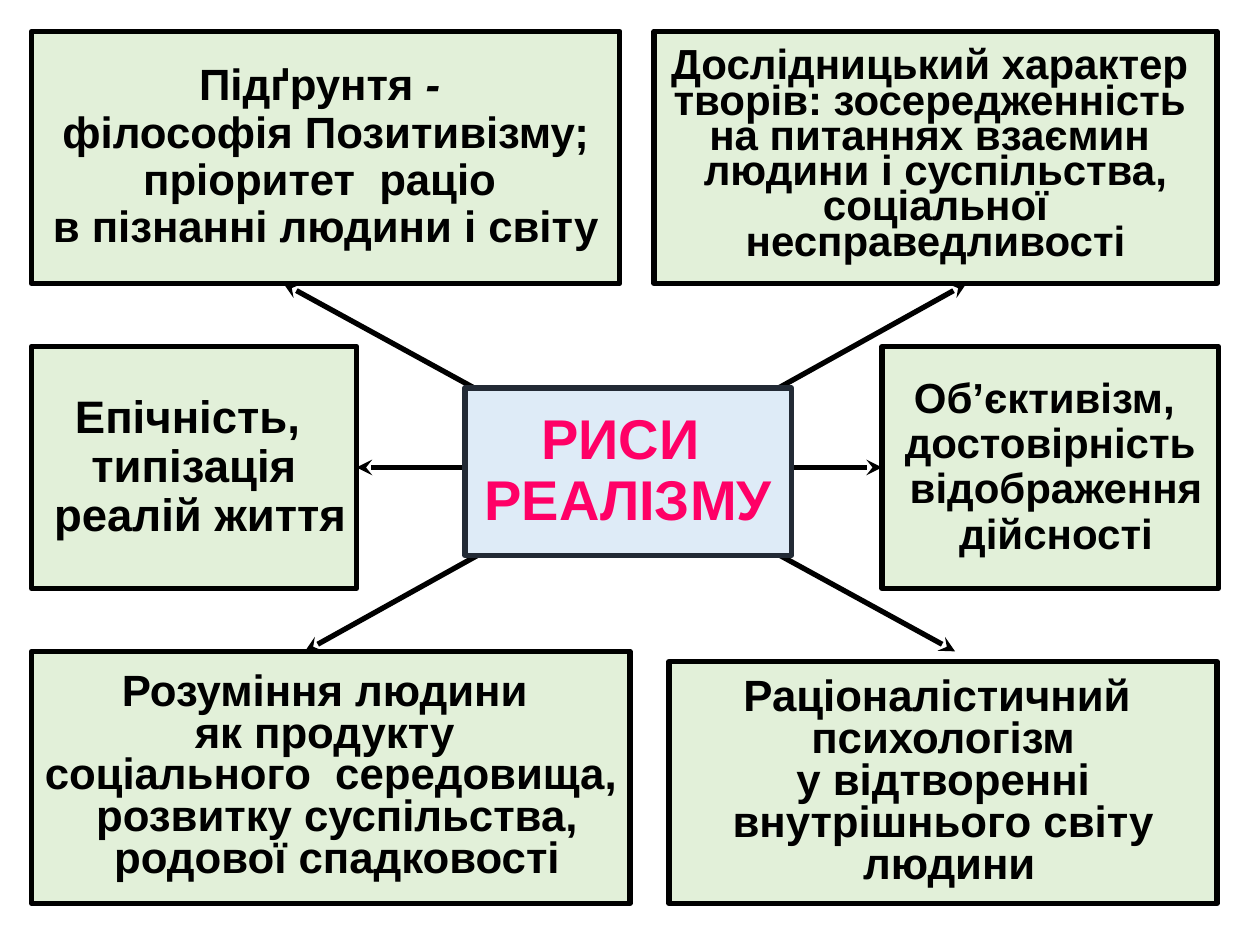
from lxml.etree import SubElement
from pptx import Presentation
from pptx.dml.color import RGBColor
from pptx.enum.shapes import MSO_CONNECTOR as Link, MSO_SHAPE as Shape
from pptx.enum.text import MSO_ANCHOR as Anchor, PP_ALIGN as Align
from pptx.oxml import parse_xml
from pptx.oxml.ns import nsdecls, qn
from pptx.util import Inches, Pt

COLORS = {"edge": "000000", "text": "000000", "card": "E2F0D9",
          "hub": "DEEBF7", "rim": "222A35", "title": "FF0066", "glyph": "800000"}

CARDS = {
    "basis": ((0.25, 0.25, 4.67, 2), 25, 0.9, [
        [("Підґрунтя ", False), ("- ", True)],
        [(" ", True), ("філософія Позитивізму; ", False)],
        "пріоритет  раціо ", "в пізнанні людини і світу"]),
    "study": ((5.19, 0.25, 4.47, 2), 24, 0.7, [
        "Дослідницький характер ", "творів: зосередженність ",
        "на питаннях взаємин ", "людини і суспільства,",
        " соціальної ", "несправедливості"]),
    "human": ((0.25, 5.17, 4.75, 2), 25, 0.8, [
        "Розуміння людини ", "як продукту ", "соціального  середовища,",
        " розвитку суспільства,", " родової спадковості"]),
    "psyche": ((5.31, 5.25, 4.35, 1.92), 25, 0.8, [
        "Раціоналістичний ", "психологізм", " у відтворенні ",
        "внутрішнього світу", " людини"]),
    "epic": ((0.25, 2.75, 2.58, 1.92), 26, 0.9, [
        "Епічність, ", "типізація", " реалій життя"]),
    "truth": ((7, 2.75, 2.67, 1.92), 24, 0.9, [
        "Об’єктивізм, ", "достовірність", " відображення", " дійсності"]),
}
HUB = ((3.69, 3.08, 2.59, 1.33), 32, 0.9, ["РИСИ ", "РЕАЛІЗМУ"])
ARROWS = [((2.25, 2.25), (7.58, 5.17), None),
          ((2.42, 5.17), (7.67, 2.25), None),
          ((2.83, 3.75), (7, 3.75), ("epic", "truth"))]


def rgb(name):
    return RGBColor.from_string(COLORS[name])


def write(frame, lines, size, gap, color="text", rim=None):
    frame.word_wrap = False
    frame.vertical_anchor = Anchor.MIDDLE
    for i, line in enumerate(lines):
        para = frame.paragraphs[0] if i == 0 else frame.add_paragraph()
        para.alignment, para.line_spacing = Align.CENTER, gap
        for text, slant in [(line, False)] if isinstance(line, str) else line:
            run = para.add_run()
            run.text = text
            font = run.font
            font.name, font.size, font.bold = "Arial", Pt(size), True
            font.italic = slant
            font.color.rgb = rgb(color)
            if rim:
                run._r.get_or_add_rPr().insert(0, parse_xml(
                    f'<a:ln {nsdecls("a")} w="{Pt(0.75)}"><a:solidFill>'
                    f'<a:srgbClr val="{COLORS[rim]}"/></a:solidFill></a:ln>'))


def box(slide, data, fill="card", edge="edge", **style):
    place, size, gap, lines = data
    rect = slide.shapes.add_shape(Shape.RECTANGLE, *map(Inches, place))
    rect.shadow.inherit = False
    rect.fill.solid()
    rect.fill.fore_color.rgb = rgb(fill)
    rect.line.color.rgb = rgb(edge)
    rect.line.width = Pt(3)
    write(rect.text_frame, lines, size, gap, **style)
    return rect


def arrow(slide, start, end, ends, cards):
    line = slide.shapes.add_connector(Link.STRAIGHT, *map(Inches, start + end))
    if ends:
        line.begin_connect(cards[ends[0]], 3)
        line.end_connect(cards[ends[1]], 1)
    line.line.color.rgb = rgb("edge")
    line.line.width = Pt(3)
    stroke = line.line._get_or_add_ln()
    for tag in ("a:headEnd", "a:tailEnd"):
        SubElement(stroke, qn(tag), type="stealth")
    SubElement(line._element.spPr, qn("a:effectLst"))


def main():
    """Build the slide on the traits of realism."""
    deck = Presentation()
    deck.slide_width, deck.slide_height = Inches(10), Inches(7.5)
    slide = deck.slides.add_slide(deck.slide_layouts[6])
    cards = {name: box(slide, data) for name, data in CARDS.items()}
    for start, end, ends in ARROWS:
        arrow(slide, start, end, ends, cards)
    box(slide, HUB, fill="hub", edge="rim", color="title", rim="glyph")
    deck.save("out.pptx")


if __name__ == "__main__":
    main()
